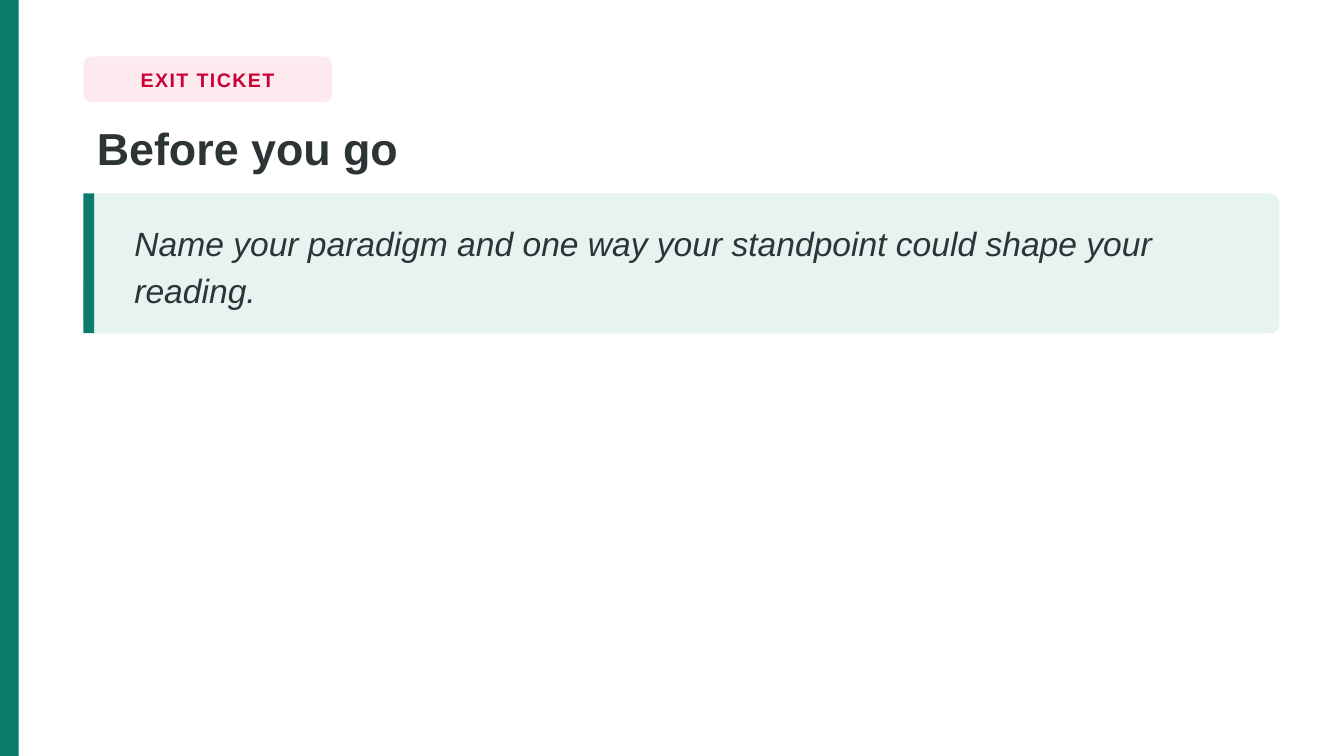
from pptx import Presentation
from pptx.dml.color import RGBColor
from pptx.enum.shapes import MSO_SHAPE
from pptx.enum.text import MSO_ANCHOR, MSO_AUTO_SIZE, PP_ALIGN
from pptx.util import Emu, Pt

PX = 4572  # EMU per px, 200 px to the inch
COLORS = {
    "paper": "FFFFFF",
    "accent": "0B7B6B",
    "tag": "FDEAEF",
    "tag_text": "CC0033",
    "panel": "E6F3F0",
    "ink": "2D3436",
}
SLIDE_WIDTH, SLIDE_HEIGHT = 2000, 1125
LEFT, WIDTH = 124, 1780
PANEL_TOP, PANEL_HEIGHT = 288, 208


def px(length):
    return Emu(length * PX)


def rgb(name):
    return RGBColor.from_string(COLORS[name])


def add_block(slide, left, top, width, height, color, radius=0):
    """Add a filled rectangle, with rounded corners when radius (px) is given."""
    kind = MSO_SHAPE.ROUNDED_RECTANGLE if radius else MSO_SHAPE.RECTANGLE
    block = slide.shapes.add_shape(kind, *map(px, (left, top, width, height)))
    if radius:
        block.adjustments[0] = radius / min(width, height)
    block.fill.solid()
    block.fill.fore_color.rgb = rgb(color)
    block.line.fill.background()
    block.shadow.inherit = False
    return block


def write(frame, text, size, color, bold=False, italic=False,
          align=PP_ALIGN.LEFT, anchor=MSO_ANCHOR.MIDDLE, line_spacing=1.0):
    frame.word_wrap = True
    frame.auto_size = MSO_AUTO_SIZE.NONE
    frame.vertical_anchor = anchor
    frame.text = text
    paragraph = frame.paragraphs[0]
    paragraph.alignment = align
    paragraph.line_spacing = line_spacing
    font = paragraph.font
    font.name, font.size = "Arial", Pt(size)
    font.bold, font.italic = bold, italic
    font.color.rgb = rgb(color)
    return paragraph


def add_tag(slide, text):
    tag = add_block(slide, LEFT, 84, 370, 68, "tag", radius=12)
    label = write(tag.text_frame, text, 10.5, "tag_text", bold=True,
                  align=PP_ALIGN.CENTER)
    label.runs[0].font._element.set("spc", "80")


def set_title(slide, text):
    title = slide.shapes.title
    title.left, title.top, title.width, title.height = map(
        px, (LEFT, 168, WIDTH, 112))
    write(title.text_frame, text, 24, "ink", bold=True,
          anchor=MSO_ANCHOR.TOP, line_spacing=1.02)


def add_prompt(slide, text):
    """Add the tinted panel holding the question, with an accent bar at its left."""
    panel = add_block(slide, LEFT, PANEL_TOP, WIDTH, PANEL_HEIGHT, "panel", radius=14)
    frame = panel.text_frame
    frame.margin_left, frame.margin_right = px(72), px(70)
    write(frame, text, 18, "ink", italic=True, line_spacing=1.16)
    add_block(slide, LEFT, PANEL_TOP, 16, PANEL_HEIGHT, "accent")


def main():
    deck = Presentation()
    deck.slide_width, deck.slide_height = px(SLIDE_WIDTH), px(SLIDE_HEIGHT)
    slide = deck.slides.add_slide(deck.slide_layouts[5])
    slide.background.fill.solid()
    slide.background.fill.fore_color.rgb = rgb("paper")

    add_block(slide, 0, 0, 28, SLIDE_HEIGHT, "accent")
    add_tag(slide, "EXIT TICKET")
    set_title(slide, "Before you go")
    add_prompt(slide, "Name your paradigm and one way your standpoint "
                      "could shape your reading.")
    deck.save("out.pptx")


if __name__ == "__main__":
    main()
